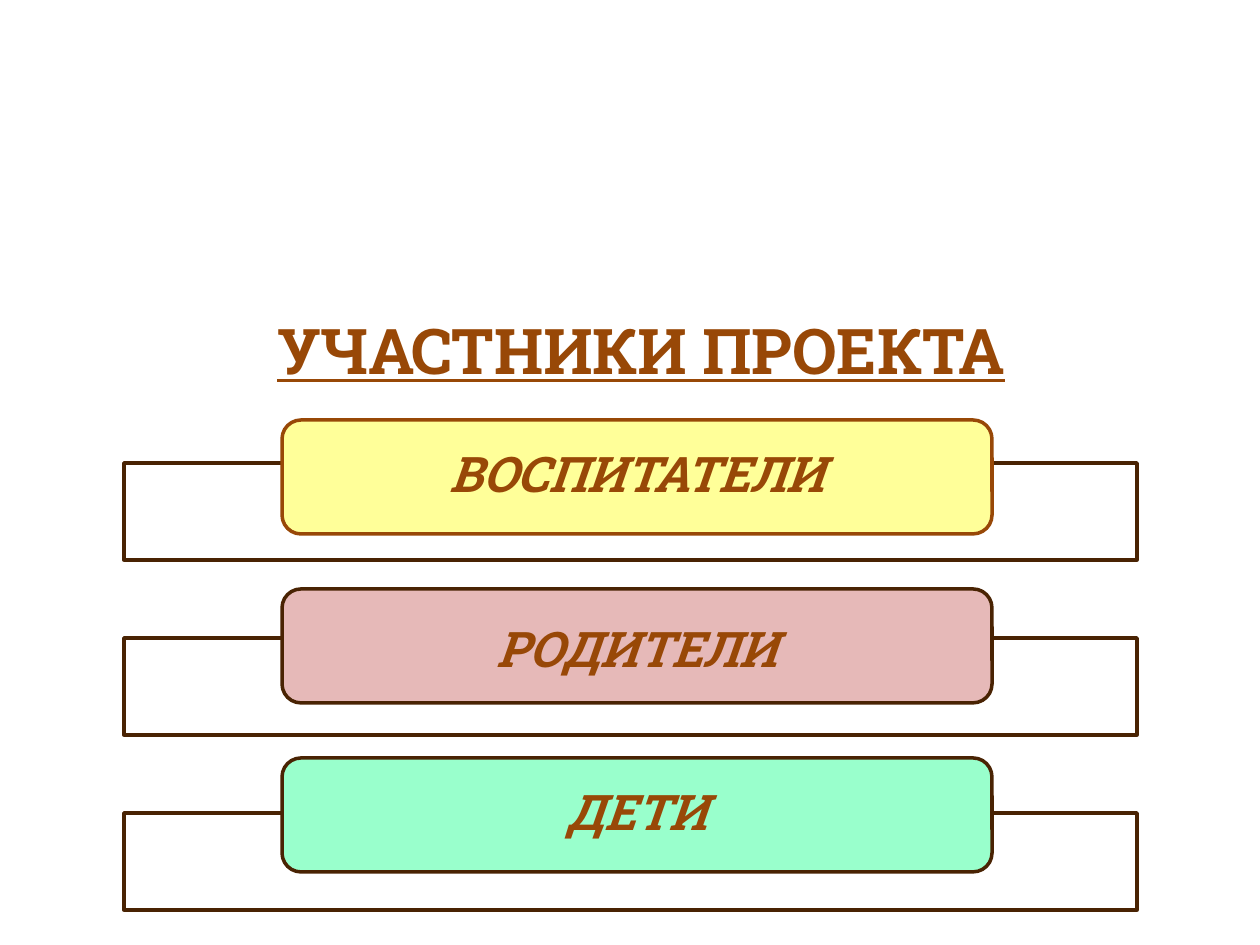
import pptx
import pptx.util
import pptx.dml.color
import pptx.enum.shapes
import pptx.enum.text
import pptx.oxml.ns
import lxml.etree

TITLE = "УЧАСТНИКИ ПРОЕКТА"
BROWN, DARK_BROWN, WHITE = "984807", "492303", "FFFFFF"
# label, card fill, card outline, top inset that lowers the label
PARTICIPANTS = [
    ("ВОСПИТАТЕЛИ", "FFFF99", BROWN, 0),
    ("РОДИТЕЛИ", "E6B9B8", DARK_BROWN, 12),
    ("ДЕТИ", "99FFCC", DARK_BROWN, 0),
]

# left, top, width, height in px; the pitch is the step to the next row
TITLE_AREA = (74, 294, 1134, 110)
FRAME, FRAME_PITCH = (124, 463, 1013, 97), 175
CARD, CARD_PITCH = (282, 420, 710, 114), 169
SIDE_INSET = 26
FRAME_OPACITY = 90

FONT = "Roboto Slab"
SHAPES = pptx.enum.shapes.MSO_SHAPE


def px(length):
    return round(length * 914400 / 126)


def color(value):
    return pptx.dml.color.RGBColor.from_string(value)


def place(area, row=0, pitch=0):
    left, top, width, height = area
    return [px(length) for length in (left, top + row * pitch, width, height)]


def add_outlined(page, kind, area, fill, line):
    shape = page.shapes.add_shape(kind, *area)
    shape.shadow.inherit = False
    shape.fill.solid()
    shape.fill.fore_color.rgb = color(fill)
    shape.line.color.rgb = color(line)
    shape.line.width = pptx.util.Pt(2)
    return shape


def set_opacity(shape, percent):
    qn = pptx.oxml.ns.qn
    fill = shape.fill._xPr.find(qn("a:solidFill"))
    lxml.etree.SubElement(fill[0], qn("a:alpha"), val=str(percent * 1000))


def write(box, text, size, italic=False, underline=False):
    frame = box.text_frame
    frame.word_wrap = True
    frame.vertical_anchor = pptx.enum.text.MSO_ANCHOR.MIDDLE
    para = frame.paragraphs[0]
    para.alignment = pptx.enum.text.PP_ALIGN.CENTER
    span = para.add_run()
    span.text = text
    font = span.font
    font.name, font.size = FONT, pptx.util.Pt(size)
    font.bold, font.italic, font.underline = True, italic, underline
    font.color.rgb = color(BROWN)
    return frame


def main():
    deck = pptx.Presentation()
    deck.slide_width, deck.slide_height = px(1260), px(945)
    page = deck.slides.add_slide(deck.slide_layouts[5])

    title = page.shapes.title
    title.left, title.top, title.width, title.height = place(TITLE_AREA)
    write(title, TITLE, 36, underline=True)

    for row, (label, fill, line, top_inset) in enumerate(PARTICIPANTS):
        frame = add_outlined(page, SHAPES.RECTANGLE,
                             place(FRAME, row, FRAME_PITCH), WHITE, DARK_BROWN)
        set_opacity(frame, FRAME_OPACITY)
        card = add_outlined(page, SHAPES.ROUNDED_RECTANGLE,
                            place(CARD, row, CARD_PITCH), fill, line)
        text = write(card, label, 28, italic=True)
        text.margin_left = text.margin_right = px(SIDE_INSET)
        text.margin_top, text.margin_bottom = px(top_inset), 0
        text.paragraphs[0].line_spacing = 0.9

    deck.save("out.pptx")


if __name__ == "__main__":
    main()
